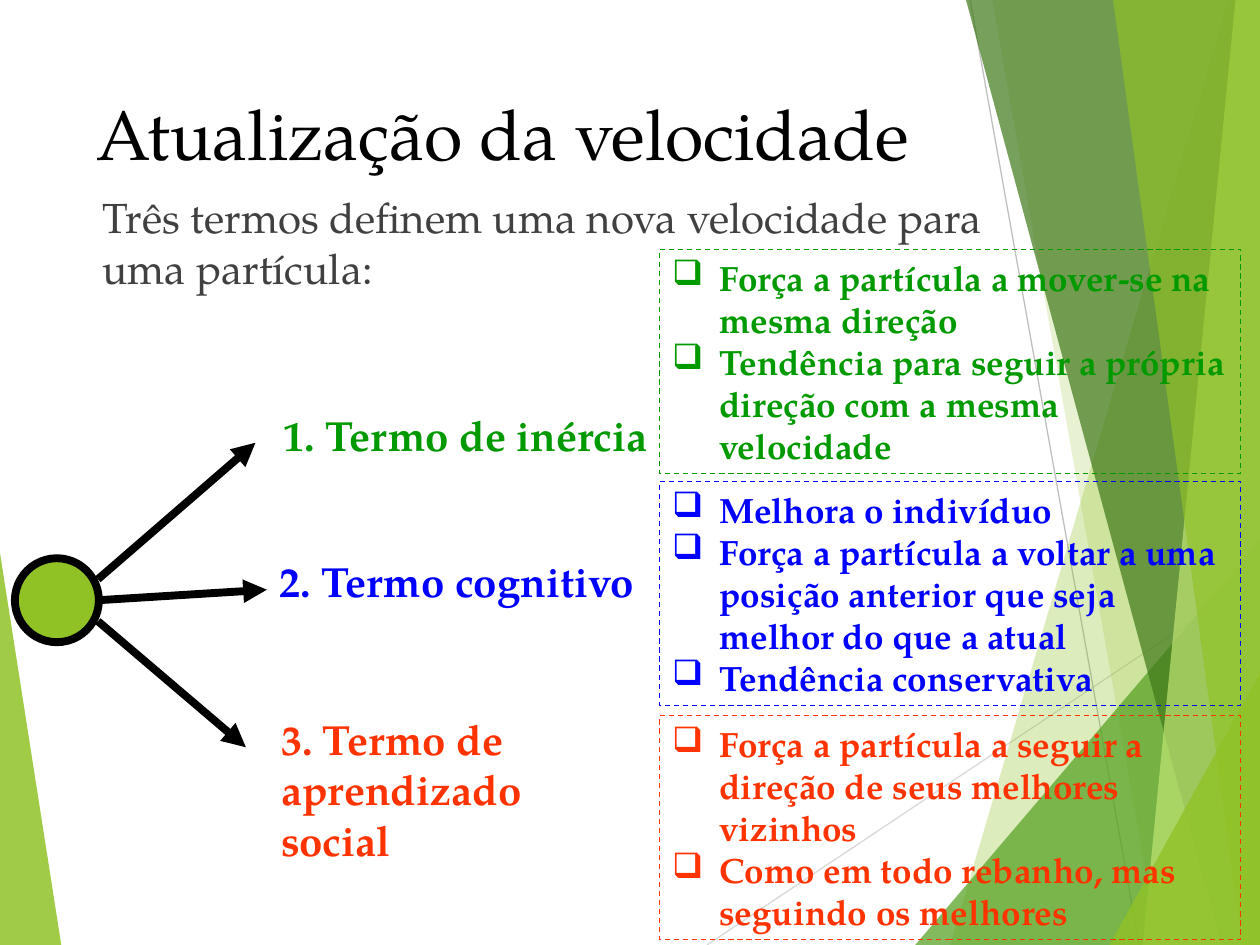
from lxml import etree
from pptx import Presentation
from pptx.dml.color import RGBColor
from pptx.enum.dml import MSO_LINE
from pptx.enum.shapes import MSO_CONNECTOR, MSO_SHAPE
from pptx.enum.text import MSO_ANCHOR, PP_ALIGN
from pptx.oxml.ns import qn
from pptx.util import Pt

RECT, OVAL = MSO_SHAPE.RECTANGLE, MSO_SHAPE.OVAL
STRAIGHT, DASH = MSO_CONNECTOR.STRAIGHT, MSO_LINE.DASH
TOP, MIDDLE, LEFT = MSO_ANCHOR.TOP, MSO_ANCHOR.MIDDLE, PP_ALIGN.LEFT

BLACK = RGBColor(0, 0, 0)
GRAY = RGBColor(0x40, 0x40, 0x40)
SILVER = RGBColor(0xBF, 0xBF, 0xBF)
PALE = RGBColor(0xD9, 0xD9, 0xD9)
LIME = RGBColor(0x90, 0xC2, 0x26)
LEAF = RGBColor(0x54, 0xA0, 0x21)
MOSS = RGBColor(0x3F, 0x78, 0x19)
MINT = RGBColor(0xC0, 0xE4, 0x74)
GREEN = RGBColor(0, 0x99, 0)
BLUE = RGBColor(0, 0, 0xFF)
RED = RGBColor(0xFF, 0x33, 0)

WIDE, HIGH = 720, 540
INDENT = 27


class Deck:
    font = "TeX Gyre Pagella"

    def __init__(self):
        self.prs = Presentation()
        self.prs.slide_width, self.prs.slide_height = Pt(WIDE), Pt(HIGH)
        self.slide = self.prs.slides.add_slide(self.prs.slide_layouts[6])
        self.shapes = self.slide.shapes

    def facet(self, x, y, foot, color, alpha, side=WIDE):
        """Panel between a slanted edge and one side of the slide."""
        pen = self.shapes.build_freeform(Pt(x), Pt(y))
        pen.add_line_segments([(Pt(a), Pt(b)) for a, b in
                               ((foot, HIGH), (side, HIGH), (side, y))])
        shape = pen.convert_to_shape()
        shape.shadow.inherit = False
        shape.line.fill.background()
        shape.fill.solid()
        shape.fill.fore_color.rgb = color
        tint = shape._element.spPr.find(qn("a:solidFill"))[0]
        etree.SubElement(tint, qn("a:alpha"), val=str(alpha * 1000))

    def line(self, start, end, color, width, arrow=False):
        link = self.shapes.add_connector(
            STRAIGHT, *(Pt(v) for v in (*start, *end)))
        link.line.color.rgb = color
        link.line.width = Pt(width)
        props = link._element.spPr
        if arrow:
            etree.SubElement(props.find(qn("a:ln")), qn("a:tailEnd"),
                             type="triangle")
        etree.SubElement(props, qn("a:effectLst"))

    def fill_in(self, shape, texts, size, color, bold, indent=0, bullet=None):
        frame = shape.text_frame
        for i, text in enumerate(texts):
            para = frame.paragraphs[0] if i == 0 else frame.add_paragraph()
            para.alignment = LEFT
            props = para._p.get_or_add_pPr()
            if indent:
                props.set("marL", str(Pt(indent)))
            if bullet:
                props.set("indent", str(-Pt(indent)))
                etree.SubElement(props, qn("a:buChar"), char=bullet)
            run = para.add_run()
            run.text = text
            font = run.font
            font.name, font.size, font.bold = self.font, Pt(size), bold
            font.color.rgb = color

    def text(self, box, texts, size, color, bold=False, wrap=True, indent=0):
        shape = self.shapes.add_textbox(*map(Pt, box))
        shape.text_frame.word_wrap = wrap
        shape.text_frame.vertical_anchor = TOP
        self.fill_in(shape, texts, size, color, bold, indent)

    def shape(self, kind, box, color, width, fill=None):
        shape = self.shapes.add_shape(kind, *map(Pt, box))
        shape.shadow.inherit = False
        shape.line.color.rgb = color
        shape.line.width = Pt(width)
        if fill is None:
            shape.fill.background()
        else:
            shape.fill.solid()
            shape.fill.fore_color.rgb = fill
        return shape

    def panel(self, box, texts, color):
        shape = self.shape(RECT, box, color, 0.75)
        shape.line.dash_style = DASH
        shape.text_frame.word_wrap = True
        shape.text_frame.vertical_anchor = MIDDLE
        self.fill_in(shape, texts, 20, color, True, INDENT, "❑")


def main():
    deck = Deck()

    # Backdrop
    deck.facet(0, 316, 35, LIME, 85, side=0)
    deck.line((404, 540), (720, 329), PALE, 0.75)
    deck.line((554.4, 0), (651, 540), SILVER, 0.75)
    for facet in (
        (702, 0, 543, LIME, 30),
        (567, 0, 662, LIME, 20),
        (720, 309, 523, LEAF, 72),
        (552, 0, 698, MOSS, 70),
        (706, 0, 653, MINT, 70),
        (636, 0, 710, LIME, 65),
        (720, 385, 634, LIME, 80),
    ):
        deck.facet(*facet)

    # Title and lead
    deck.text((48, 48, 500, 104), ["Atualização da velocidade"], 40, BLACK)
    deck.text((24.5, 106, 579, 356),
              ["Três termos definem uma nova velocidade para uma partícula:"],
              24, GRAY, indent=INDENT)

    # Particle
    deck.shape(OVAL, (8.5, 319, 48, 48), BLACK, 4.5, LIME)

    # Terms: colour, arrow height and tip, label box, label, panel top, points
    terms = (
        (GREEN, 331, (146, 253), (155, 230.5, 224, 36),
         ["1. Termo de inércia"], 142.5,
         ["Força a partícula a mover-se na mesma direção",
          "Tendência para seguir a própria direção com a mesma velocidade"]),
        (BLUE, 343, (152.5, 337), (152.5, 314, 220, 36),
         ["2. Termo cognitivo"], 275,
         ["Melhora o indivíduo",
          "Força a partícula a voltar a uma posição anterior que seja "
          "melhor do que a atual",
          "Tendência conservativa"]),
        (RED, 355, (140.5, 427), (153.5, 404, 220, 65),
         ["3. Termo de", "aprendizado social"], 409,
         ["Força a partícula a seguir a direção de seus melhores vizinhos",
          "Como em todo rebanho, mas seguindo os melhores"]),
    )
    for color, y, tip, box, label, top, points in terms:
        deck.line((56, y), tip, BLACK, 4.5, arrow=True)
        deck.text(box, label, 24, color, bold=True, wrap=False)
        deck.panel((377, top, 332, 128), points, color)

    deck.prs.save("out.pptx")


if __name__ == "__main__":
    main()
